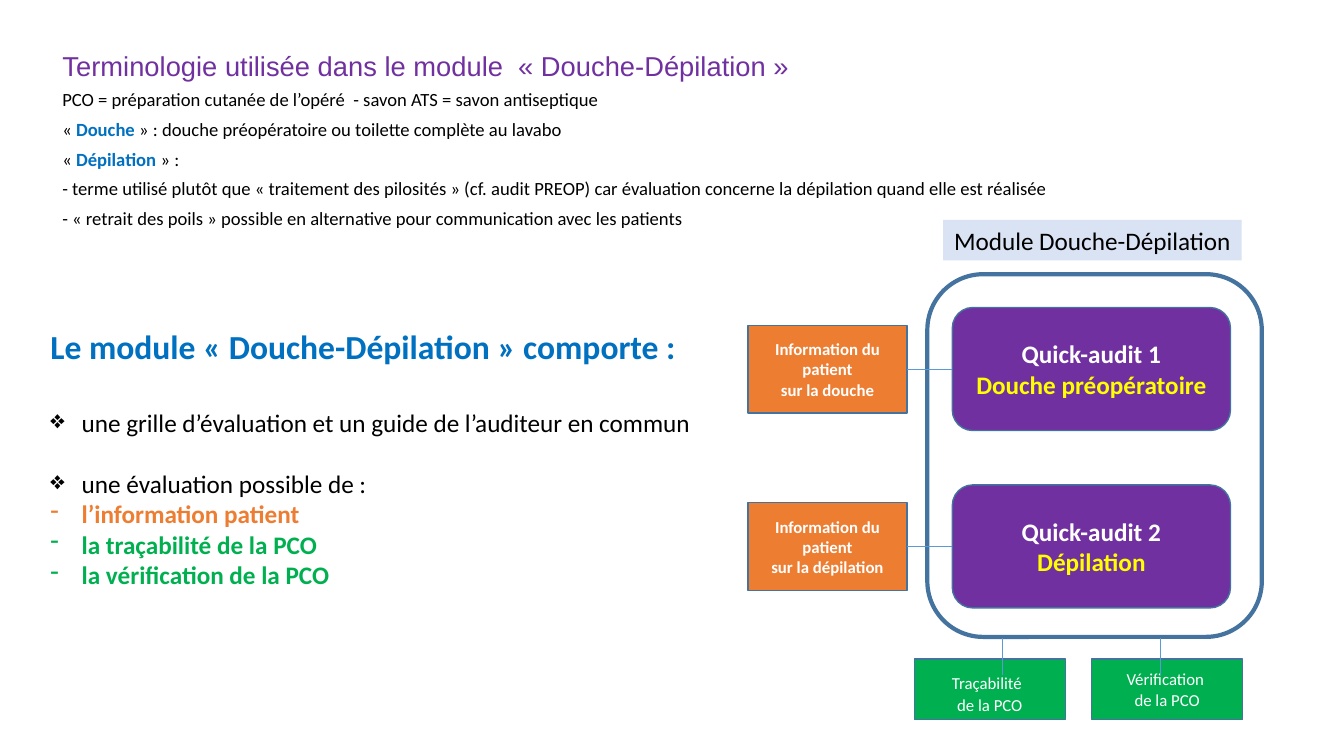
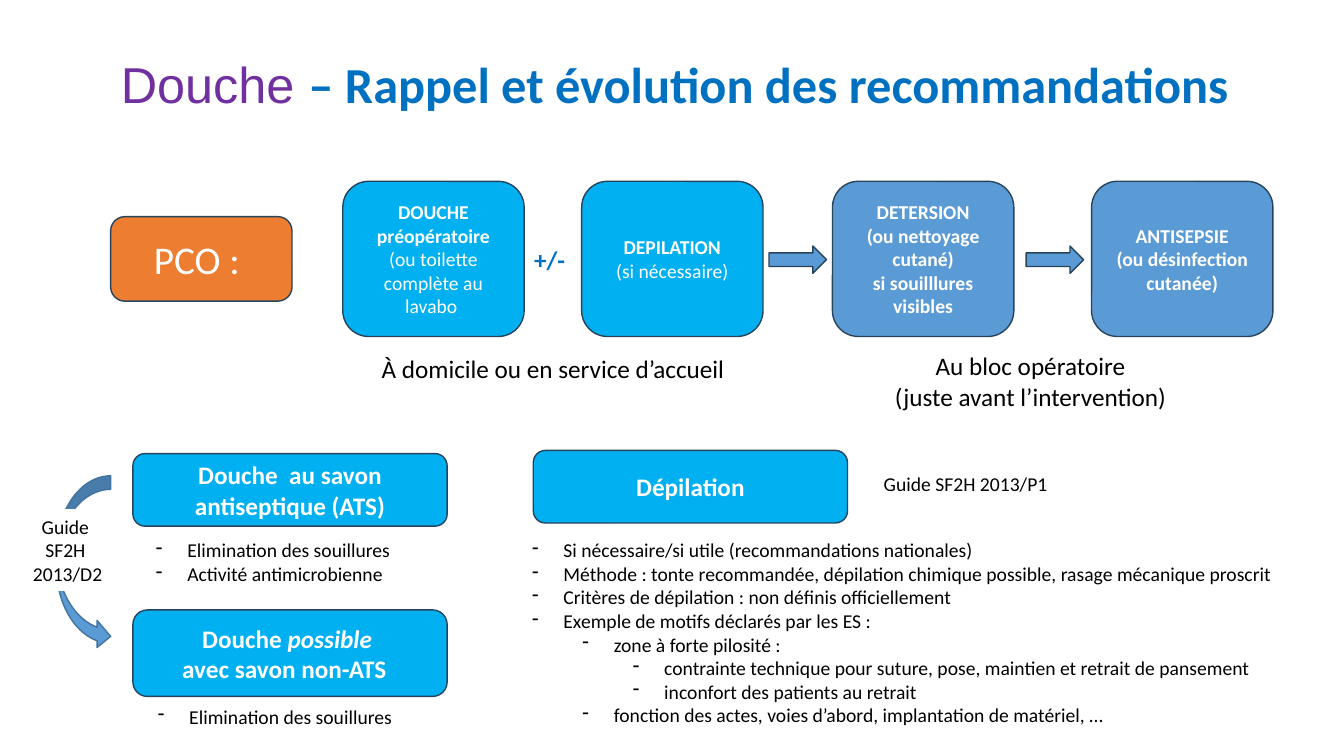
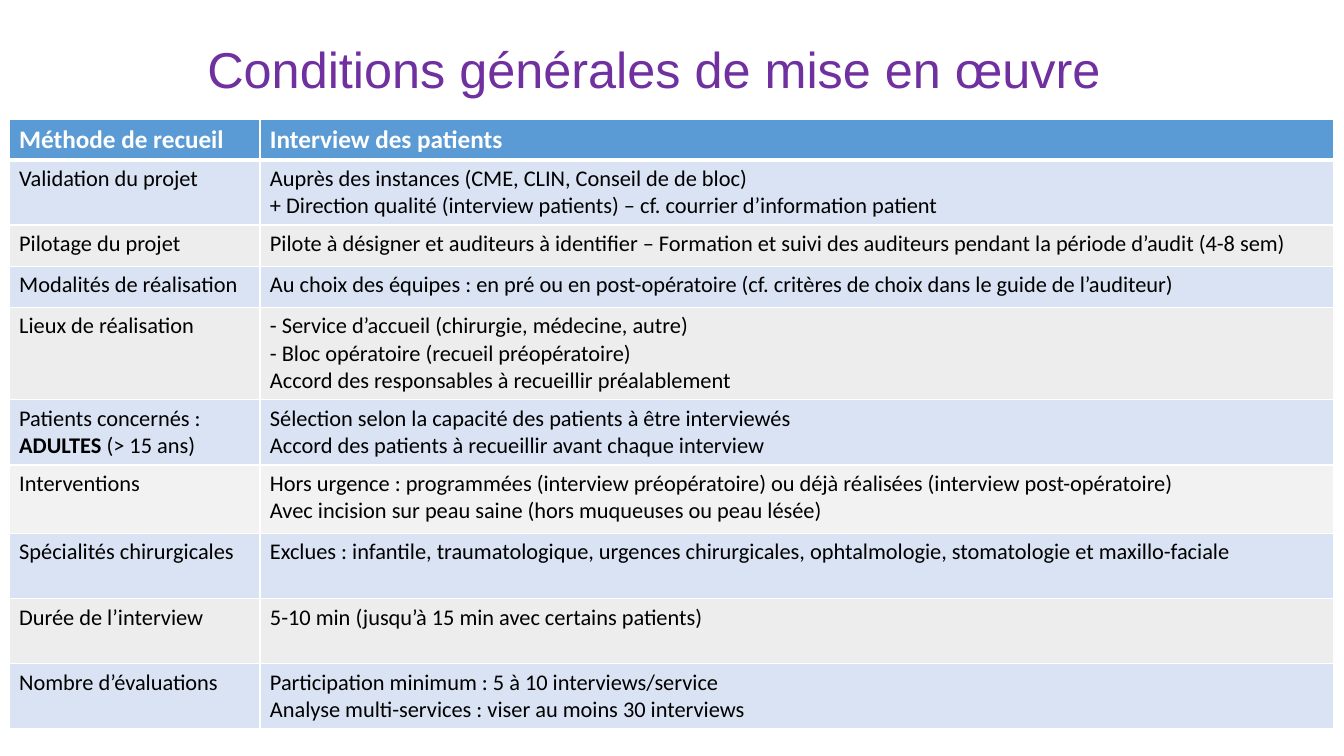
from dataclasses import dataclass

from lxml.etree import SubElement
from pptx import Presentation
from pptx.dml.color import RGBColor
from pptx.enum.shapes import MSO_CONNECTOR, MSO_SHAPE
from pptx.enum.text import MSO_ANCHOR, MSO_AUTO_SIZE, PP_ALIGN
from pptx.oxml.ns import qn
from pptx.util import Cm, Pt

BLACK = RGBColor(0x00, 0x00, 0x00)
WHITE = RGBColor(0xFF, 0xFF, 0xFF)
PURPLE = RGBColor(0x70, 0x30, 0xA0)
BLUE = RGBColor(0x00, 0x70, 0xC0)
SKY = RGBColor(0x00, 0xB0, 0xF0)
STEEL = RGBColor(0x5B, 0x9B, 0xD5)
STEEL_EDGE = RGBColor(0x43, 0x73, 0x9E)
DARK_EDGE = RGBColor(0x28, 0x44, 0x5D)
PALE_BLUE = RGBColor(0xDA, 0xE3, 0xF3)
PALE_GREY = RGBColor(0xED, 0xED, 0xED)
LIGHT_GREY = RGBColor(0xF2, 0xF2, 0xF2)
ORANGE = RGBColor(0xED, 0x7D, 0x31)
GREEN = RGBColor(0x00, 0xB0, 0x50)
YELLOW = RGBColor(0xFF, 0xFF, 0x00)

TITLE_FONT = "Arial"
BODY_FONT = "Calibri"
TITLE_ONLY = 5
HANGING = 0.79
LEVEL_STEP = 1.27


@dataclass
class Span:
    """A piece of text; only what is set differs from its paragraph."""
    text: str
    size: float = None
    color: RGBColor = None
    bold: bool = None
    italic: bool = None
    font: str = None


@dataclass
class Para:
    """A paragraph, as a text or a list of spans; what is unset comes from its box."""
    spans: object
    size: float = None
    color: RGBColor = None
    bold: bool = None
    bullet: str = None
    level: int = 0
    before: float = 0


def set_font(font, size=None, color=None, bold=None, italic=None, name=None):
    if size is not None:
        font.size = Pt(size)
    if color is not None:
        font.color.rgb = color
    if bold is not None:
        font.bold = bold
    if italic is not None:
        font.italic = italic
    if name is not None:
        font.name = name


def set_bullet(paragraph, symbol, level):
    properties = paragraph._p.get_or_add_pPr()
    properties.set("marL", str(Cm(HANGING + level * LEVEL_STEP)))
    properties.set("indent", str(-Cm(HANGING)))
    bullet = properties.makeelement(qn("a:buChar"), {"char": symbol})
    properties.find(qn("a:defRPr")).addprevious(bullet)


def set_border(cell, side, points):
    line = SubElement(cell._tc.get_or_add_tcPr(), qn("a:" + side), w=str(Pt(points)))
    fill = SubElement(line, qn("a:solidFill"))
    SubElement(fill, qn("a:srgbClr"), val=str(WHITE))


class Deck:
    def __init__(self):
        self.presentation = Presentation()
        self.presentation.slide_width = Cm(33.87)
        self.presentation.slide_height = Cm(19.05)
        self.page = None

    def add_page(self):
        layout = self.presentation.slide_layouts[TITLE_ONLY]
        self.page = self.presentation.slides.add_slide(layout)

    def title(self, place, spans, size=36, align=PP_ALIGN.LEFT, spacing=0.9,
              anchor=MSO_ANCHOR.MIDDLE):
        box = self.page.shapes.title
        box.left, box.top, box.width, box.height = map(Cm, place)
        box.text_frame.auto_size = MSO_AUTO_SIZE.NONE
        box.text_frame.vertical_anchor = anchor
        self.set_text(box.text_frame, [spans], size, PURPLE, False, align,
                      spacing=spacing, font=TITLE_FONT)

    def set_text(self, frame, paras, size, color, bold=False, align=PP_ALIGN.LEFT,
                 spacing=None, before=0, font=BODY_FONT):
        for index, para in enumerate(paras):
            if not isinstance(para, Para):
                para = Para(para)
            paragraph = frame.add_paragraph() if index else frame.paragraphs[0]
            paragraph.alignment = align
            paragraph.level = para.level
            if spacing:
                paragraph.line_spacing = spacing
            paragraph.space_before = Pt(para.before or before)
            set_font(paragraph.font, para.size or size, para.color or color,
                     bold if para.bold is None else para.bold, name=font)
            if para.bullet:
                set_bullet(paragraph, para.bullet, para.level)
            spans = [Span(para.spans)] if isinstance(para.spans, str) else para.spans
            for span in spans:
                run = paragraph.add_run()
                run.text = span.text
                set_font(run.font, span.size, span.color, span.bold, span.italic, span.font)

    def text(self, place, paras, size=14, color=BLACK, wrap=True, **style):
        box = self.page.shapes.add_textbox(*map(Cm, place))
        box.text_frame.word_wrap = wrap
        self.set_text(box.text_frame, paras, size, color, **style)

    def shape(self, kind, place, fill=None, edge=None, paras=(), weight=1,
              size=18, color=WHITE, bold=True, wrap=True):
        shape = self.page.shapes.add_shape(kind, *map(Cm, place))
        shape.shadow.inherit = False
        if fill is None:
            shape.fill.background()
        else:
            shape.fill.solid()
            shape.fill.fore_color.rgb = fill
        if edge is None:
            shape.line.fill.background()
        else:
            shape.line.color.rgb = edge
            shape.line.width = Pt(weight)
        shape.text_frame.word_wrap = wrap
        self.set_text(shape.text_frame, paras, size, color, bold, PP_ALIGN.CENTER)

    def line(self, *ends):
        line = self.page.shapes.add_connector(MSO_CONNECTOR.STRAIGHT, *map(Cm, ends))
        line.line.color.rgb = STEEL
        line.line.width = Pt(0.5)
        SubElement(line._element.spPr, qn("a:effectLst"))

    def table(self, left, top, widths, rows):
        """Each row is (height, fill, cells); a cell is a list of paragraphs."""
        heights = [row[0] for row in rows]
        table = self.page.shapes.add_table(
            len(rows), len(widths), Cm(left), Cm(top),
            Cm(sum(widths)), Cm(sum(heights))).table
        for column, width in zip(table.columns, widths):
            column.width = Cm(width)
        for index, (height, fill, cells) in enumerate(rows):
            header = index == 0
            table.rows[index].height = Cm(height)
            for column, paras in enumerate(cells):
                cell = table.cell(index, column)
                set_border(cell, "lnL", 1)
                set_border(cell, "lnR", 1)
                set_border(cell, "lnB", 3 if header else 1)
                cell.fill.solid()
                cell.fill.fore_color.rgb = fill
                self.set_text(cell.text_frame, paras, 18 if header else 16,
                              WHITE if header else BLACK, header)


def dashes(*items):
    """Dash list from texts, or (text, level) pairs for deeper items."""
    pairs = [(item, 0) if isinstance(item, str) else item for item in items]
    return [Para(text, bullet="-", level=level) for text, level in pairs]


def terminology_page(deck):
    deck.add_page()
    deck.title((1.32, 1.35, 31.22, 0.9),
               "Terminologie utilisée dans le module  « Douche-Dépilation »",
               size=19.5, spacing=0.7, anchor=MSO_ANCHOR.TOP)
    deck.text((1.32, 2.25, 31.22, 3.82), [
        "PCO = préparation cutanée de l’opéré  - savon ATS = savon antiseptique",
        [Span("« "), Span("Douche", color=BLUE, bold=True),
         Span(" » : douche préopératoire ou toilette complète au lavabo")],
        [Span("« "), Span("Dépilation", color=BLUE, bold=True), Span(" » :")],
        "- terme utilisé plutôt que « traitement des pilosités » (cf. audit PREOP) "
        "car évaluation concerne la dépilation quand elle est réalisée",
        "- « retrait des poils » possible en alternative pour communication avec les patients",
    ], size=13.3, spacing=0.7, before=10)
    deck.text((1.02, 8.1, 18.11, 6.93), [
        Para("Le module « Douche-Dépilation » comporte :", size=24, color=BLUE, bold=True),
        Para("une grille d’évaluation et un guide de l’auditeur en commun",
             bullet="❖", before=29),
        Para("une évaluation possible de :", bullet="❖", before=22),
        Para("l’information patient", color=ORANGE, bold=True, bullet="-"),
        Para("la traçabilité de la PCO", color=GREEN, bold=True, bullet="-"),
        Para("la vérification de la PCO", color=GREEN, bold=True, bullet="-"),
    ], size=18)

    step = 4.47
    deck.shape(MSO_SHAPE.ROUNDED_RECTANGLE, (23.37, 6.91, 8.43, 9.14),
               edge=STEEL_EDGE, weight=3)
    audits = [("Quick-audit 1", "Douche préopératoire", "sur la douche"),
              ("Quick-audit 2", "Dépilation", "sur la dépilation")]
    for index, (name, topic, subject) in enumerate(audits):
        down = index * step
        deck.shape(MSO_SHAPE.ROUNDED_RECTANGLE, (24, 7.75 + down, 7.01, 3.1),
                   PURPLE, STEEL_EDGE, [name, Para(topic, color=YELLOW)])
        deck.shape(MSO_SHAPE.RECTANGLE, (18.85, 8.2 + down, 4.01, 2.21),
                   ORANGE, STEEL_EDGE, ["Information du patient", subject], size=12)
        deck.line(22.86, 9.3 + down, 24, 9.3 + down)
    checks = [([Span("Traçabilité"), Span(" ", size=18)], 25.25),
              ("Vérification ", 29.24)]
    for index, (check, line_x) in enumerate(checks):
        deck.shape(MSO_SHAPE.RECTANGLE, (23.04 + index * step, 16.61, 3.81, 1.52),
                   GREEN, STEEL_EDGE, [check, "de la PCO"], size=12, bold=False)
        deck.line(line_x, 16.07, line_x, 17.02)
    deck.shape(MSO_SHAPE.RECTANGLE, (23.77, 5.54, 7.52, 1.02), PALE_BLUE,
               paras=["Module Douche-Dépilation"], color=BLACK, bold=False)


def recommendations_page(deck):
    deck.add_page()
    deck.title((2.79, 0.36, 29.21, 3.68), [
        Span("Douche "),
        Span("– Rappel et évolution des recommandations",
             color=BLUE, bold=True, font=BODY_FONT)])

    deck.shape(MSO_SHAPE.ROUNDED_RECTANGLE, (2.79, 5.46, 4.57, 2.13),
               ORANGE, DARK_EDGE, ["PCO : "], size=28, bold=False)
    stages = [
        (8.64, SKY, ["DOUCHE", "préopératoire",
                     Para("(ou toilette complète au lavabo ", bold=False)]),
        (14.66, SKY, ["DEPILATION", Para("(si nécessaire)", bold=False)]),
        (20.98, STEEL, ["DETERSION", "(ou nettoyage cutané)", "si souilllures visibles"]),
        (27.51, STEEL, ["ANTISEPSIE", "(ou désinfection cutanée)"]),
    ]
    for left, fill, paras in stages:
        deck.shape(MSO_SHAPE.ROUNDED_RECTANGLE, (left, 4.57, 4.57, 3.91),
                   fill, DARK_EDGE, paras, size=14)
    for left in (19.38, 25.86):
        deck.shape(MSO_SHAPE.RIGHT_ARROW, (left, 6.2, 1.45, 0.69), STEEL, DARK_EDGE)
    deck.text((13.21, 6.02, 1.5, 1.02), ["+/-"], size=18, color=BLUE, bold=True)
    deck.text((9.37, 8.79, 9.25, 1.02), ["À domicile ou en service d’accueil"],
              size=18, wrap=False)
    deck.text((22.12, 8.71, 7.7, 1.8),
              ["Au bloc opératoire", "(juste avant l’intervention)"],
              size=18, wrap=False, align=PP_ALIGN.CENTER)

    headings = [
        (3.35, 11.43, 1.83, ["Douche  au savon antiseptique (ATS)"]),
        (3.35, 15.37, 2.18, [[Span("Douche "), Span("possible ", italic=True)],
                             "avec savon non-ATS  "]),
        (13.44, 11.35, 1.83, ["Dépilation"]),
    ]
    for left, top, height, paras in headings:
        deck.shape(MSO_SHAPE.ROUNDED_RECTANGLE, (left, top, 7.92, height),
                   SKY, DARK_EDGE, paras)
    deck.text((3.68, 13.44, 7.26, 1.45),
              dashes("Elimination des souillures", "Activité antimicrobienne"))
    deck.text((3.73, 17.63, 7.16, 0.86), dashes("Elimination des souillures"))
    deck.text((13.16, 13.44, 19.63, 5.05), dashes(
        "Si nécessaire/si utile (recommandations nationales)",
        "Méthode : tonte recommandée, dépilation chimique possible, rasage mécanique proscrit",
        "Critères de dépilation : non définis officiellement",
        "Exemple de motifs déclarés par les ES :",
        ("zone à forte pilosité :", 1),
        ("contrainte technique pour suture, pose, maintien et retrait de pansement", 2),
        ("inconfort des patients au retrait", 2),
        ("fonction des actes, voies d’abord, implantation de matériel, …", 1)))
    deck.shape(MSO_SHAPE.CURVED_RIGHT_ARROW, (1.42, 11.99, 1.37, 4.39), STEEL, STEEL_EDGE)
    deck.shape(MSO_SHAPE.RECTANGLE, (0.56, 12.83, 2.29, 2.06), WHITE,
               paras=["Guide ", "SF2H ", "2013/D2"], size=14, color=BLACK,
               bold=False, wrap=False)
    deck.text((22.02, 11.76, 4.67, 0.86), ["Guide SF2H 2013/P1"], wrap=False)


def conditions_page(deck):
    deck.add_page()
    deck.title((1.88, 0.64, 29.21, 2.36), "Conditions générales de mise en œuvre",
               align=PP_ALIGN.CENTER)
    deck.table(0.23, 3, (6.32, 27.05), [
        (1.03, STEEL, (["Méthode de recueil"], ["Interview des patients"])),
        (1.64, PALE_BLUE, (["Validation du projet"], [
            "Auprès des instances (CME, CLIN, Conseil de de bloc)",
            "+ Direction qualité (interview patients) – cf. courrier d’information patient"])),
        (1.04, PALE_GREY, (["Pilotage du projet"], [
            "Pilote à désigner et auditeurs à identifier – Formation et suivi des "
            "auditeurs pendant la période d’audit (4-8 sem)"])),
        (1.04, PALE_BLUE, (["Modalités de réalisation"], [
            "Au choix des équipes : en pré ou en post-opératoire "
            "(cf. critères de choix dans le guide de l’auditeur)"])),
        (2.32, PALE_GREY, (["Lieux de réalisation"], [
            "- Service d’accueil (chirurgie, médecine, autre)",
            "- Bloc opératoire (recueil préopératoire)",
            "Accord des responsables à recueillir préalablement"])),
        (1.64, PALE_BLUE, (
            ["Patients concernés :", [Span("ADULTES", bold=True), Span(" (> 15 ans)")]],
            ["Sélection selon la capacité des patients à être interviewés",
             "Accord des patients à recueillir avant chaque interview"])),
        (1.73, LIGHT_GREY, (["Interventions"], [
            "Hors urgence : programmées (interview préopératoire) "
            "ou déjà réalisées (interview post-opératoire)",
            "Avec incision sur peau saine (hors muqueuses ou peau lésée)"])),
        (1.64, PALE_BLUE, (["Spécialités chirurgicales"], [
            "Exclues : infantile, traumatologique, urgences chirurgicales, "
            "ophtalmologie, stomatologie et maxillo-faciale"])),
        (1.64, PALE_GREY, (["Durée de l’interview"], [
            "5-10 min (jusqu’à 15 min avec certains patients)"])),
        (1.64, PALE_BLUE, (["Nombre d’évaluations"], [
            "Participation minimum : 5 à 10 interviews/service",
            "Analyse multi-services : viser au moins 30 interviews"])),
    ])


def main():
    deck = Deck()
    terminology_page(deck)
    recommendations_page(deck)
    conditions_page(deck)
    deck.presentation.save("out.pptx")


if __name__ == "__main__":
    main()
